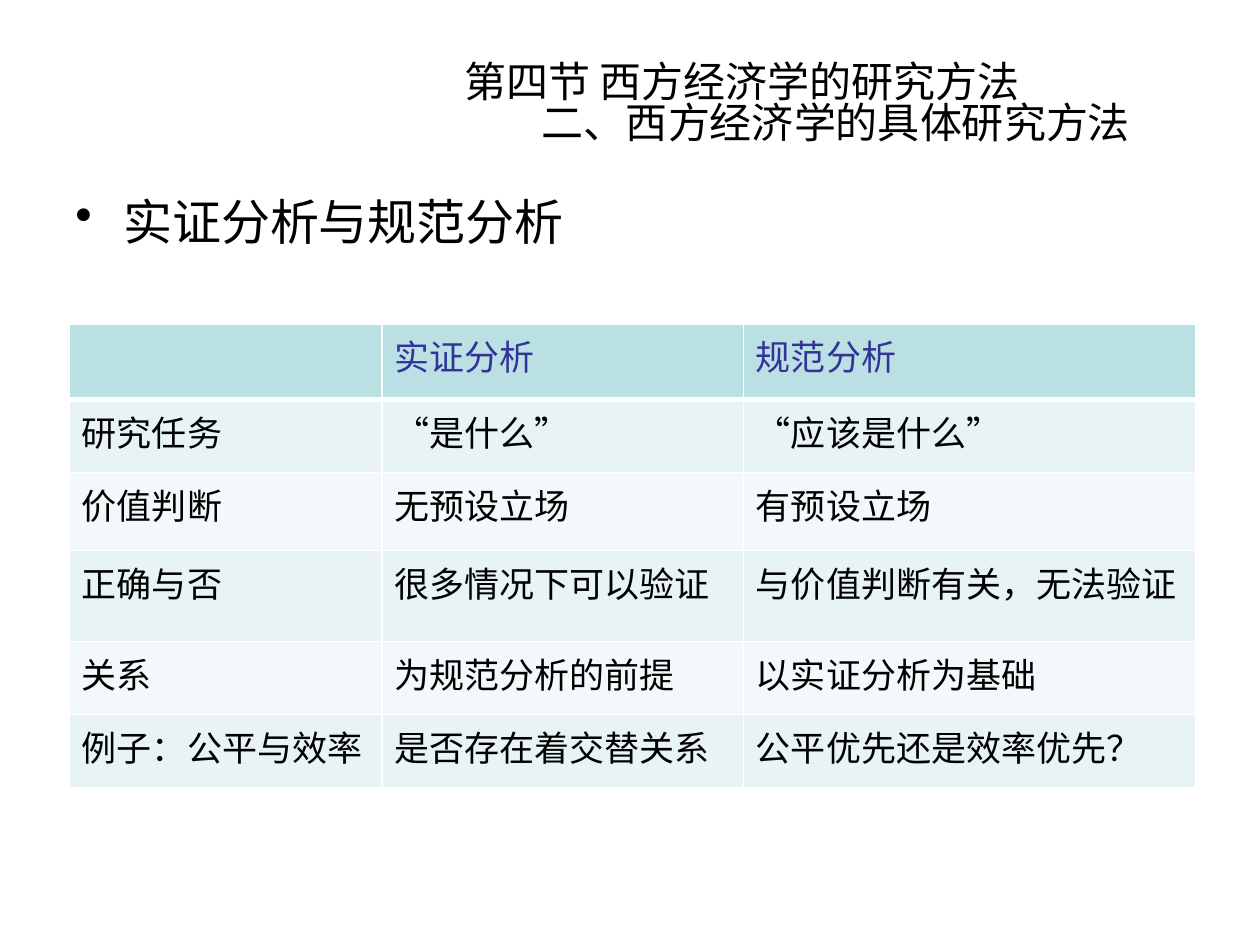
from pptx import Presentation
from pptx.dml.color import RGBColor
from pptx.enum.text import MSO_ANCHOR as Anchor, PP_ALIGN as Align
from pptx.oxml import parse_xml
from pptx.oxml.ns import nsdecls
from pptx.util import Inches, Pt

COLORS = {
    "text": "000000",
    "header_text": "333399",
    "header": "BBE0E3",
    "odd_row": "E7F3F4",
    "even_row": "F3F9FA",
    "border": "FFFFFF",
}
LATIN_FONT, CHINESE_FONT = "Arial", "Noto Sans CJK SC"

TITLE_LINES = [
    # text, left indent, font
    ("第四节 西方经济学的研究方法", 1.78, CHINESE_FONT),
    ("二、西方经济学的具体研究方法", 3.27, LATIN_FONT),
]
COMPARISON = [
    ["", "实证分析", "规范分析"],
    ["研究任务", "“是什么”", "“应该是什么”"],
    ["价值判断", "无预设立场", "有预设立场"],
    ["正确与否", "很多情况下可以验证", "与价值判断有关，无法验证"],
    ["关系", "为规范分析的前提", "以实证分析为基础"],
    ["例子：公平与效率", "是否存在着交替关系", "公平优先还是效率优先？"],
]
COLUMN_WIDTHS = [2.48, 2.87, 3.59]
ROW_HEIGHTS = [0.6, 0.58, 0.62, 0.72, 0.58, 0.58]


def write_text(paragraph, text, size=20, color="text", font=LATIN_FONT,
               align=Align.LEFT, left=0, first=0, bullet=None, spacing=None):
    """Fill one paragraph with formatted text; indents are in inches."""
    properties = paragraph._p.get_or_add_pPr()
    properties.set("marL", str(Inches(left)))
    properties.set("indent", str(Inches(first)))
    if bullet:
        properties.append(parse_xml(f'<a:buChar {nsdecls("a")} char="{bullet}"/>'))
    paragraph.alignment = align
    if spacing:
        paragraph.line_spacing = spacing
    run = paragraph.add_run()
    run.text = text
    run.font.size = Pt(size)
    run.font.bold = False
    run.font.name = font
    run.font.color.rgb = RGBColor.from_string(COLORS[color])
    run._r.get_or_add_rPr().find("{*}latin").addnext(
        parse_xml(f'<a:ea {nsdecls("a")} typeface="{CHINESE_FONT}"/>'))


class SlideBuilder:
    def __init__(self, presentation):
        self.slide = presentation.slides.add_slide(presentation.slide_layouts[6])

    def text_box(self, left, top, width, height, anchor=Anchor.TOP):
        shape = self.slide.shapes.add_textbox(
            Inches(left), Inches(top), Inches(width), Inches(height))
        frame = shape.text_frame
        frame.word_wrap = True
        frame.vertical_anchor = anchor
        return frame

    def title(self, lines):
        frame = self.text_box(0.5, 0.37, 9, 0.94, Anchor.MIDDLE)
        for index, (text, indent, font) in enumerate(lines):
            paragraph = frame.add_paragraph() if index else frame.paragraphs[0]
            write_text(paragraph, text, size=24, font=font, align=Align.CENTER,
                       left=indent, spacing=0.82)

    def heading(self, text):
        frame = self.text_box(0.5, 1.47, 9, 0.71)
        write_text(frame.paragraphs[0], text, size=28, left=0.38, first=-0.38,
                   bullet="•")

    def cell_borders(self, cell, **widths):
        properties = cell._tc.get_or_add_tcPr()
        for index, side in enumerate("LRTB"):
            properties.insert(index, parse_xml(
                f'<a:ln{side} {nsdecls("a")} w="{Pt(widths.get(side, 1))}">'
                f'<a:solidFill><a:srgbClr val="{COLORS["border"]}"/></a:solidFill>'
                f'</a:ln{side}>'))

    def table(self, left, top, rows):
        table = self.slide.shapes.add_table(
            len(rows), len(COLUMN_WIDTHS), Inches(left), Inches(top),
            Inches(sum(COLUMN_WIDTHS)), Inches(sum(ROW_HEIGHTS))).table
        for column, width in zip(table.columns, COLUMN_WIDTHS):
            column.width = Inches(width)
        for row, height in zip(table.rows, ROW_HEIGHTS):
            row.height = Inches(height)

        for r, values in enumerate(rows):
            # Header row first, then alternating bands
            fill = "header" if r == 0 else "odd_row" if r % 2 else "even_row"
            color = "text" if r else "header_text"
            # A thick rule separates the header from the body
            thick = {0: {"B": 3}, 1: {"T": 3}}.get(r, {})
            for c, value in enumerate(values):
                cell = table.cell(r, c)
                cell.fill.solid()
                cell.fill.fore_color.rgb = RGBColor.from_string(COLORS[fill])
                self.cell_borders(cell, **thick)
                if value:
                    write_text(cell.text_frame.paragraphs[0], value, color=color)


def main():
    presentation = Presentation()
    presentation.slide_width = Inches(10)
    presentation.slide_height = Inches(7.5)
    builder = SlideBuilder(presentation)

    # Heading and comparison table, then the section title
    builder.heading("实证分析与规范分析")
    builder.table(0.55, 2.57, COMPARISON)
    builder.title(TITLE_LINES)

    presentation.save("out.pptx")


if __name__ == "__main__":
    main()
